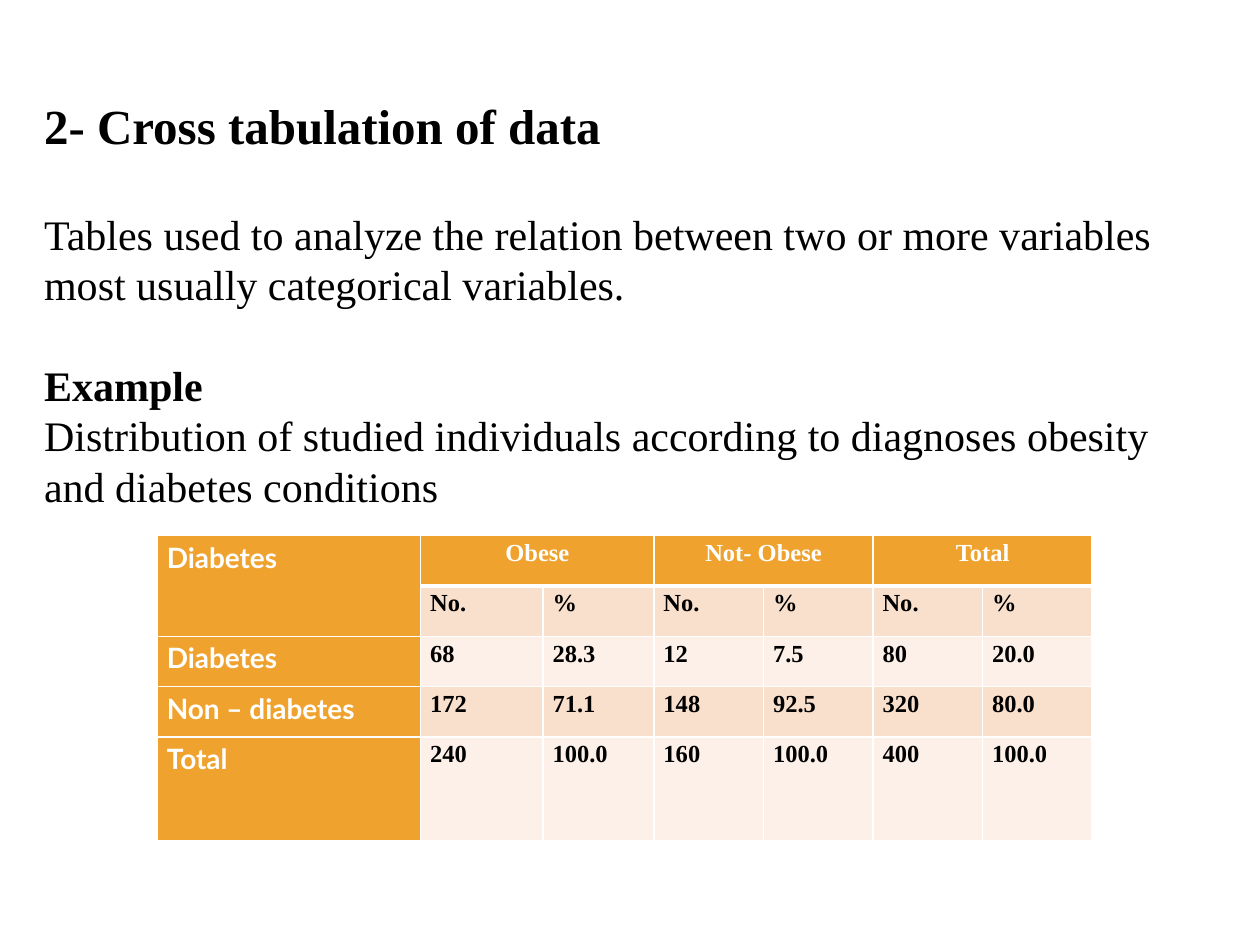
from lxml import etree
from pptx import Presentation
from pptx.dml.color import RGBColor
from pptx.enum.text import MSO_ANCHOR, MSO_AUTO_SIZE, PP_ALIGN
from pptx.oxml.ns import qn
from pptx.util import Pt

LEFT, CENTER = PP_ALIGN.LEFT, PP_ALIGN.CENTER
TOP, NO_AUTOFIT = MSO_ANCHOR.TOP, MSO_AUTO_SIZE.NONE

COLORS = {"text": "000000", "header": "F0A22E", "on_header": "FFFFFF",
          "border": "FFFFFF", "band_dark": "F9E0CD", "band_light": "FCF0E8"}
SERIF, SANS = "Times New Roman", "Lato"

TITLE = "2- Cross tabulation of data"
# Body paragraphs: text, bold, space before
BODY = [
    ("Tables used to analyze the relation between two or more variables "
     "most usually categorical variables.", False, 0),
    ("Example", True, 28.8),
    ("Distribution of studied individuals according to diagnoses obesity "
     "and diabetes conditions", False, 0),
]
GROUPS = ["Obese", "Not- Obese", "Total"]
ROWS = [
    ["Diabetes"] + [text for group in GROUPS for text in (group, "")],
    [""] + ["No.", "%"] * len(GROUPS),
    ["Diabetes", "68", "28.3", "12", "7.5", "80", "20.0"],
    ["Non – diabetes", "172", "71.1", "148", "92.5", "320", "80.0"],
    ["Total", "240", "100.0", "160", "100.0", "400", "100.0"],
]
COLUMN_WIDTHS = [150.4, 70, 63.4] + [62.6] * 4
ROW_HEIGHTS = [28.8] * 4 + [59]


def set_all(target, values):
    for name, value in values.items():
        setattr(target, name, value)


def style_font(font, size, bold, color="text", face=SERIF):
    set_all(font, {"name": face, "size": Pt(size), "bold": bold})
    font.color.rgb = RGBColor.from_string(COLORS[color])


def place_text(placeholder, left, top, width, height):
    set_all(placeholder, {"left": Pt(left), "top": Pt(top),
                          "width": Pt(width), "height": Pt(height)})
    set_all(placeholder.text_frame, {
        "word_wrap": True, "auto_size": NO_AUTOFIT, "vertical_anchor": TOP,
        "margin_top": 0, "margin_bottom": 0})
    return placeholder.text_frame


def add_paragraph(frame, text, size, bold, first, spacing=None, before=0):
    paragraph = frame.paragraphs[0] if first else frame.add_paragraph()
    set_all(paragraph, {"alignment": LEFT, "line_spacing": spacing,
                        "space_before": Pt(before), "space_after": Pt(0)})
    run = paragraph.add_run()
    run.text = text
    style_font(run.font, size, bold)
    return paragraph


def remove_bullet(paragraph):
    properties = paragraph._p.get_or_add_pPr()
    properties.set("marL", "0")
    properties.set("indent", "0")
    etree.SubElement(properties, qn("a:buNone"))


def add_border(cell, side, weight):
    line = etree.SubElement(cell._tc.get_or_add_tcPr(), qn(f"a:ln{side}"),
                            w=str(Pt(weight)))
    fill = etree.SubElement(line, qn("a:solidFill"))
    etree.SubElement(fill, qn("a:srgbClr"), val=COLORS["border"])


def format_cell(cell, text, row, column):
    is_label = column == 0
    is_header = is_label or row == 0
    # Borders, heavier below the two header rows
    heavy_row = 1 if is_label else 0
    add_border(cell, "L", 1)
    add_border(cell, "R", 1)
    if row == 0:
        add_border(cell, "T", 1)
    add_border(cell, "B", 3 if row == heavy_row else 1)
    # Fill
    band = "band_dark" if row % 2 else "band_light"
    cell.fill.solid()
    cell.fill.fore_color.rgb = RGBColor.from_string(
        COLORS["header" if is_header else band])
    # Text
    set_all(cell, {"margin_left": Pt(5.4), "margin_right": Pt(5.4),
                   "margin_top": 0, "margin_bottom": 0,
                   "vertical_anchor": TOP})
    if not text:
        return
    paragraph = cell.text_frame.paragraphs[0]
    set_all(paragraph, {"line_spacing": 1.15,
                        "alignment": CENTER if row == 0 and not is_label else LEFT})
    run = paragraph.add_run()
    run.text = text
    style_font(run.font, 16 if is_label else 14, True,
               "on_header" if is_header else "text", SANS if is_label else SERIF)


def add_cross_table(slide):
    table = slide.shapes.add_table(
        len(ROWS), len(COLUMN_WIDTHS), Pt(90), Pt(306),
        Pt(sum(COLUMN_WIDTHS)), Pt(sum(ROW_HEIGHTS))).table
    for column, width in zip(table.columns, COLUMN_WIDTHS):
        column.width = Pt(width)
    for row, height in zip(table.rows, ROW_HEIGHTS):
        row.height = Pt(height)
    for r, texts in enumerate(ROWS):
        for c, text in enumerate(texts):
            format_cell(table.cell(r, c), text, r, c)
    # Header spans
    table.cell(0, 0).merge(table.cell(1, 0))
    for c in range(1, len(COLUMN_WIDTHS), 2):
        table.cell(0, c).merge(table.cell(0, c + 1))


def main():
    prs = Presentation()
    set_all(prs, {"slide_width": Pt(720), "slide_height": Pt(540)})
    slide = prs.slides.add_slide(prs.slide_layouts[1])

    # Heading
    title = place_text(slide.shapes.title, 18, 54.5, 672, 40)
    add_paragraph(title, TITLE, 28, True, first=True)

    # Explanation and example
    body = place_text(slide.placeholders[1], 18, 119, 672, 180)
    for index, (text, bold, before) in enumerate(BODY):
        remove_bullet(add_paragraph(body, text, 24, bold, index == 0,
                                    Pt(28.8), before))

    add_cross_table(slide)
    prs.save("out.pptx")


if __name__ == "__main__":
    main()
